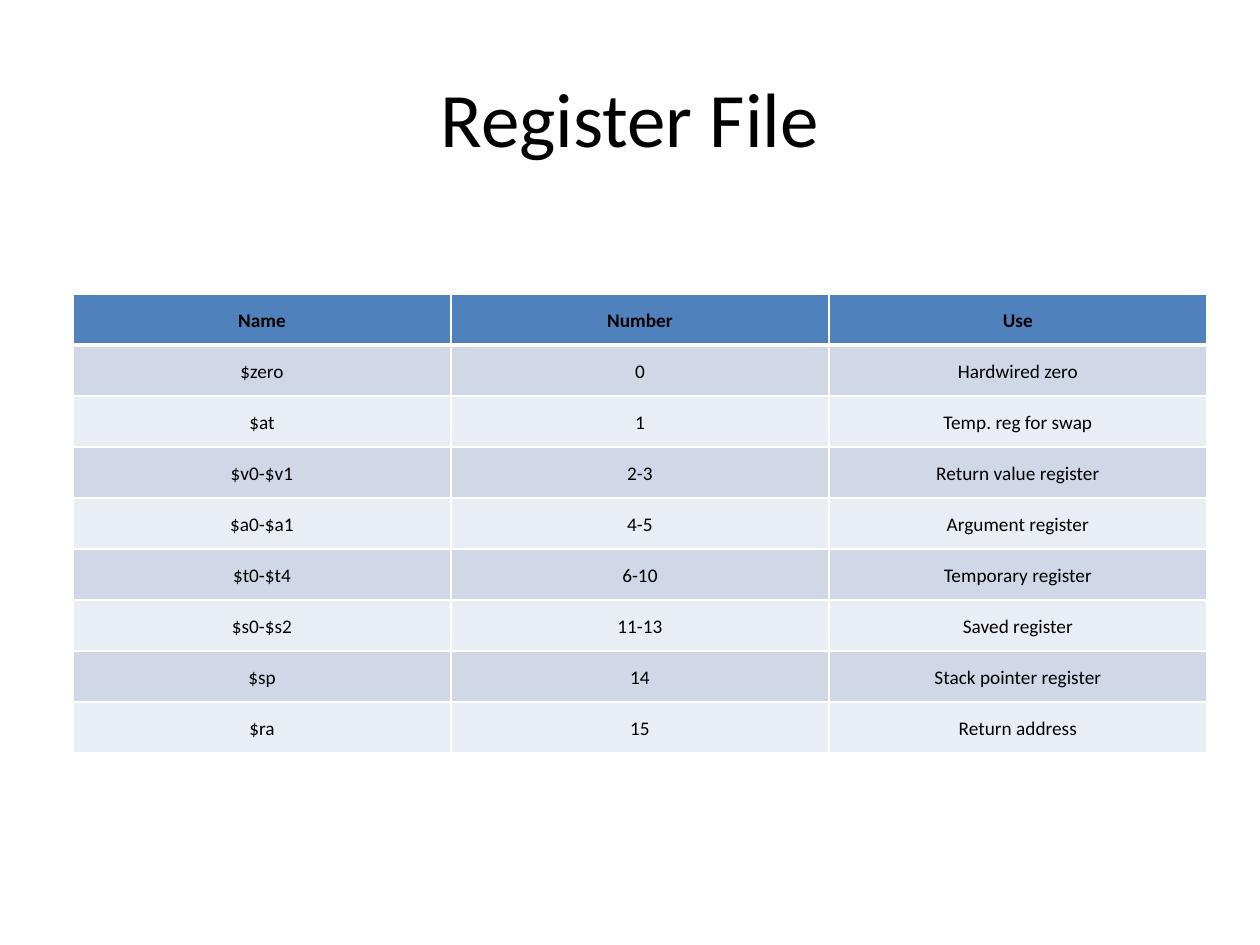
from lxml import etree
from pptx import Presentation
from pptx import util as u
from pptx.dml.color import RGBColor
from pptx.enum import text
from pptx.oxml import ns

PX = u.Inches(1) // 126
FONT = "Calibri"
INK, RULE, HEAD = "000000", "FFFFFF", "4F81BD"
BANDS = "D0D8E8", "E9EDF4"
ROWS = [
    ("Name", "Number", "Use"),
    ("$zero", "0", "Hardwired zero"),
    ("$at", "1", "Temp. reg for swap"),
    ("$v0-$v1", "2-3", "Return value register"),
    ("$a0-$a1", "4-5", "Argument register"),
    ("$t0-$t4", "6-10", "Temporary register"),
    ("$s0-$s2", "11-13", "Saved register"),
    ("$sp", "14", "Stack pointer register"),
    ("$ra", "15", "Return address"),
]


def color(code):
    return RGBColor.from_string(code)


def write(frame, words, size, bold=False):
    frame.text = words
    para = frame.paragraphs[0]
    para.alignment = text.PP_ALIGN.CENTER
    font = para.runs[0].font
    font.name, font.size, font.bold = FONT, u.Pt(size), bold
    font.color.rgb = color(INK)
    return para


def border(cell, widths):
    """Rule the sides of a cell; widths are points for left, right, top, bottom."""
    props = cell._tc.get_or_add_tcPr()
    for i, (side, width) in enumerate(zip("LRTB", widths)):
        line = etree.Element(ns.qn("a:ln" + side), w=str(u.Pt(width)))
        fill = etree.SubElement(line, ns.qn("a:solidFill"))
        etree.SubElement(fill, ns.qn("a:srgbClr"), val=RULE)
        props.insert(i, line)


def add_title(slide, words, box):
    title = slide.shapes.title
    title.left, title.top, title.width, title.height = (n * PX for n in box)
    title.text_frame.vertical_anchor = text.MSO_ANCHOR.MIDDLE
    write(title.text_frame, words, 44)


def add_grid(slide, rows, box):
    size = [n * PX for n in box]
    grid = slide.shapes.add_table(len(rows), len(rows[0]), *size).table
    for r, row in enumerate(rows):
        head = r == 0
        for c, words in enumerate(row):
            cell = grid.cell(r, c)
            cell.fill.solid()
            cell.fill.fore_color.rgb = color(HEAD if head else BANDS[(r - 1) % 2])
            cell.margin_left = cell.margin_right = 9 * PX
            cell.margin_top = cell.margin_bottom = 0
            cell.vertical_anchor = text.MSO_ANCHOR.MIDDLE
            write(cell.text_frame, words, 11, head).line_spacing = 1.15
            border(cell, (1, 1, 3 if r == 1 else 1, 3 if head else 1))


def main():
    deck = Presentation()
    deck.slide_width, deck.slide_height = 1260 * PX, 945 * PX
    slide = deck.slides.add_slide(deck.slide_layouts[5])
    add_title(slide, "Register File", (63, 38, 1134, 158))
    add_grid(slide, ROWS, (73, 294, 1134, 459))
    deck.save("out.pptx")


if __name__ == "__main__":
    main()
